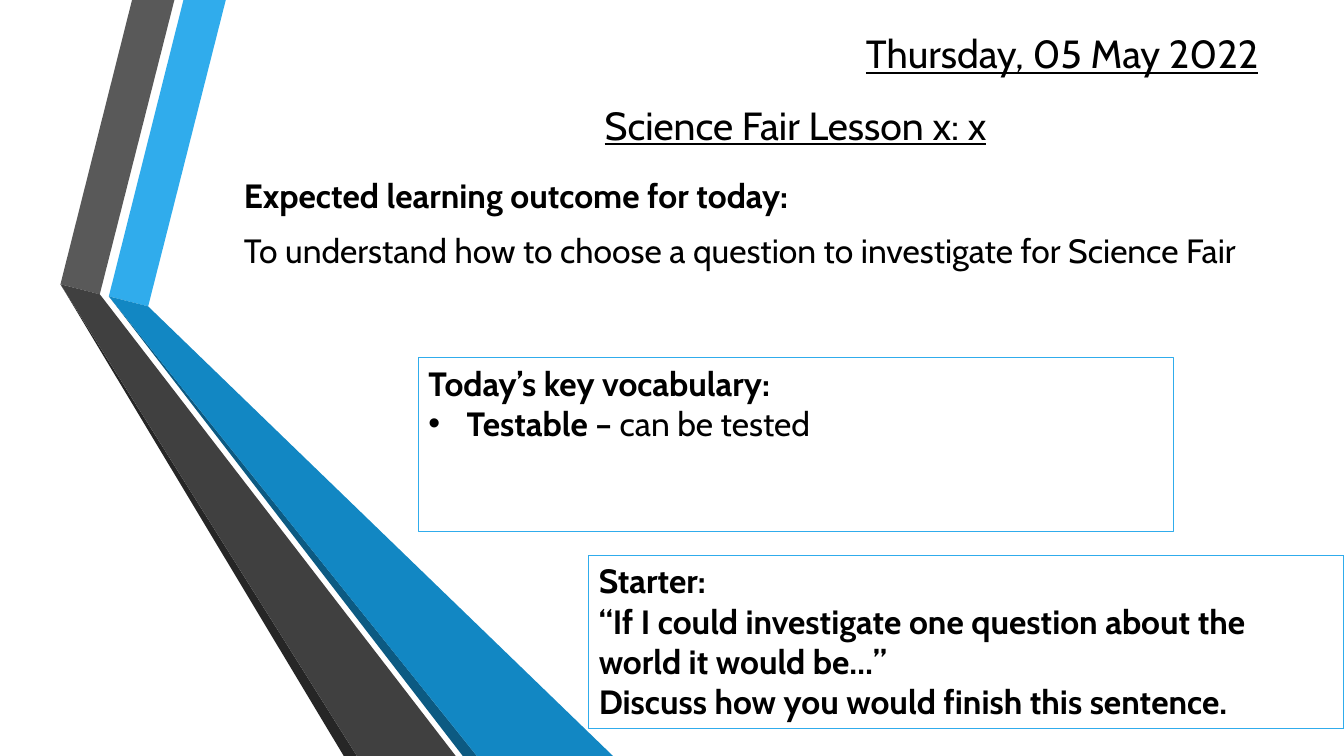
from pptx import Presentation
from pptx.dml.color import RGBColor
from pptx.enum.shapes import MSO_SHAPE as SHAPE
from pptx.enum.text import MSO_ANCHOR as ANCHOR, MSO_AUTO_SIZE as AUTO, PP_ALIGN as ALIGN
from pptx.oxml.xmlchemy import OxmlElement
from pptx.util import Inches, Pt

COLORS = {
    "text": "000000", "sky": "30ACEC", "blue": "1287C3", "navy": "0C5A82",
    "grey": "595959", "dark": "404040", "shade": "262626",
}
HEADING = {"size": Pt(28), "underline": True}
BOLD = {"size": Pt(24), "bold": True}
PLAIN = {"size": Pt(24), "bold": False}


class SlideBuilder:
    font = "Cabin"

    def __init__(self, prs):
        self.slide = prs.slides.add_slide(prs.slide_layouts[5])
        self.shapes = self.slide.shapes

    def color(self, name):
        return RGBColor.from_string(COLORS[name])

    def ribbon(self, color, points):
        """Draw a filled outline through points given in inches."""
        pts = [(Inches(x), Inches(y)) for x, y in points]
        fb = self.shapes.build_freeform(*pts[0], scale=1.0)
        fb.add_line_segments(pts[1:], close=True)
        sp = fb.convert_to_shape()
        sp.shadow.inherit = False
        sp.fill.solid()
        sp.fill.fore_color.rgb = self.color(color)
        sp.line.fill.background()

    def add_paragraphs(self, sp, paragraphs, anchor=ANCHOR.TOP, **para_format):
        """Fill a shape with paragraphs, each a list of (text, format) runs."""
        tf = sp.text_frame
        frame_format = {"word_wrap": True, "auto_size": AUTO.NONE, "vertical_anchor": anchor}
        for name, value in frame_format.items():
            setattr(tf, name, value)
        for i, runs in enumerate(paragraphs):
            p = tf.add_paragraph() if i else tf.paragraphs[0]
            for name, value in para_format.items():
                setattr(p, name, value)
            for text, run_format in runs:
                r = p.add_run()
                r.text = text
                r.font.color.rgb = self.color("text")
                for name, value in {"name": self.font, **run_format}.items():
                    setattr(r.font, name, value)
        return tf

    def title(self, box, text):
        sp = self.shapes.title
        for name, value in zip(("left", "top", "width", "height"), box):
            setattr(sp, name, Inches(value))
        self.add_paragraphs(sp, [[(text, HEADING)]], ANCHOR.BOTTOM, alignment=ALIGN.RIGHT)

    def text(self, box, paragraphs, anchor=ANCHOR.TOP, **para_format):
        sp = self.shapes.add_textbox(*map(Inches, box))
        self.add_paragraphs(sp, paragraphs, anchor, **para_format)

    def panel(self, box, paragraphs):
        sp = self.shapes.add_shape(SHAPE.RECTANGLE, *map(Inches, box))
        sp.shadow.inherit = False
        sp.fill.background()
        sp.line.color.rgb = self.color("sky")
        sp.line.width = Pt(0.75)
        return self.add_paragraphs(sp, paragraphs, alignment=ALIGN.LEFT)

    def bullet(self, p, indent=0.38):
        pPr = p._p.get_or_add_pPr()
        pPr.set("marL", str(Inches(indent)))
        pPr.set("indent", str(-Inches(indent)))
        for tag, key, value in (("a:buFont", "typeface", "Arial"), ("a:buChar", "char", "•")):
            el = OxmlElement(tag)
            el.set(key, value)
            pPr.append(el)


def main():
    prs = Presentation()
    prs.slide_width, prs.slide_height = Inches(13.33), Inches(7.5)
    s = SlideBuilder(prs)

    # Folded ribbons on the left
    s.ribbon("sky", [(1.08, 2.94), (1.47, 3.04), (2.24, 0), (1.82, 0)])
    s.ribbon("grey", [(0.99, 2.92), (1.73, 0), (1.31, 0), (0.6, 2.82)])
    s.ribbon("shade", [(0.6, 2.82), (3.41, 7.5), (3.54, 7.5)])
    s.ribbon("navy", [(1.08, 2.94), (4.59, 7.5), (4.73, 7.5)])
    s.ribbon("blue", [(1.08, 2.94), (4.73, 7.5), (6.08, 7.5), (1.47, 3.04)])
    s.ribbon("dark", [(0.6, 2.82), (3.54, 7.5), (4.52, 7.5), (1.06, 3.01), (0.99, 2.92)])

    # Date and lesson heading
    s.title((3.2, 0.27, 9.38, 0.54), "Thursday, 05 May 2022")
    s.text((3.2, 0.98, 9.38, 0.54), [[("Science Fair Lesson x: x", HEADING)]],
           ANCHOR.BOTTOM, alignment=ALIGN.CENTER)

    # Learning outcome
    s.text((2.32, 1.69, 10.62, 1.52), [
        [("Expected learning outcome for today:", BOLD)],
        [("To understand how to choose a question to investigate for Science Fair", PLAIN)],
    ], space_before=Pt(4), space_after=Pt(6))

    # Vocabulary and starter panels
    tf = s.panel((4.15, 3.55, 7.49, 1.72), [
        [("Today’s key vocabulary:", BOLD)],
        [("Testable – ", BOLD), ("can be tested", PLAIN)],
    ])
    s.bullet(tf.paragraphs[1])
    s.panel((5.84, 5.51, 7.49, 1.72), [
        [("Starter:", BOLD)],
        [("“If I could investigate one question about the world it would be…”", BOLD)],
        [("Discuss how you would finish this sentence.", BOLD)],
    ])

    prs.save("out.pptx")


if __name__ == "__main__":
    main()
